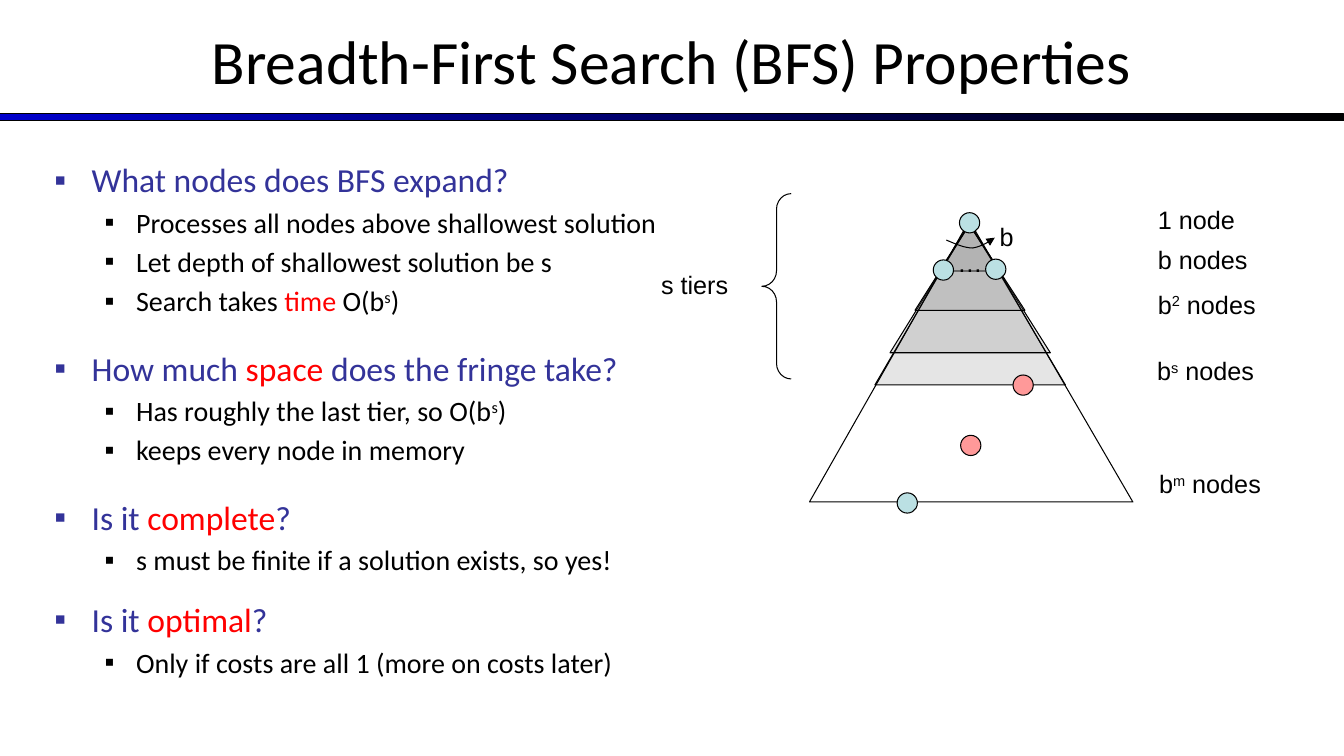
from dataclasses import dataclass

from lxml.etree import SubElement
from pptx import Presentation
from pptx.dml.color import RGBColor
from pptx.enum.shapes import MSO_SHAPE
from pptx.enum.text import MSO_ANCHOR, PP_ALIGN
from pptx.oxml.ns import qn
from pptx.shapes.autoshape import Shape
from pptx.slide import Slide
from pptx.text.text import TextFrame, _Paragraph
from pptx.util import Cm, Pt


@dataclass(frozen=True)
class Theme:
    body_font: str = "Calibri"
    label_font: str = "Arial"
    title_size: float = 44
    heading_size: float = 24
    point_size: float = 20
    label_size: float = 18
    line_width: float = 0.75
    black: str = "000000"
    bar_start: str = "0000CC"
    heading: str = "333399"
    accent: str = "FF0000"
    tier: str = "808080"
    node: str = "BBE0E3"
    solution: str = "FF9999"


@dataclass(frozen=True)
class Piece:
    text: str
    accent: bool = False
    raised: bool = False


@dataclass(frozen=True)
class Level:
    margin: float
    hanging: float
    size: float
    color: str


@dataclass(frozen=True)
class Bullet:
    level: Level
    pieces: list[Piece]
    space_before: float


@dataclass(frozen=True)
class Triangle:
    top: float
    bottom: float
    left: float
    right: float


@dataclass(frozen=True)
class Node:
    left: float
    top: float
    color: str


@dataclass(frozen=True)
class Label:
    left: float
    top: float
    width: float
    pieces: list[Piece]


Point = tuple[float, float]
THEME = Theme()
APEX_X = 24.43
NODE_SIZE = 0.51
LABEL_HEIGHT = 1.02
HEADING = Level(0.94, 0.94, THEME.heading_size, THEME.heading)
POINT = Level(2.06, 0.79, THEME.point_size, THEME.black)


def power(before: str, exponent: str, after: str) -> list[Piece]:
    return [Piece(before), Piece(exponent, raised=True), Piece(after)]


def question(before: str, key: str, after: str, space_before: float) -> Bullet:
    return Bullet(HEADING, [Piece(before), Piece(key, accent=True), Piece(after)], space_before)


def point(*pieces: Piece) -> Bullet:
    return Bullet(POINT, list(pieces), 4)


BULLETS = [
    Bullet(HEADING, [Piece("What nodes does BFS expand?")], 0),
    point(Piece("Processes all nodes above shallowest solution")),
    point(Piece("Let depth of shallowest solution be s")),
    point(Piece("Search takes "), Piece("time", accent=True), *power(" O(b", "s", ")")),
    question("How much ", "space", " does the fringe take?", 21.8),
    point(*power("Has roughly the last tier, so O(b", "s", ")")),
    point(Piece("keeps every node in memory")),
    question("Is it ", "complete", "?", 21.8),
    point(Piece("s must be finite if a solution exists, so yes!")),
    question("Is it ", "optimal", "?", 16.2),
    point(Piece("Only if costs are all 1 (more on costs later)")),
]
TIERS = [
    Triangle(5.66, 6.83, 23.67, 25.20),
    Triangle(5.61, 9.70, 22.05, 26.85),
    Triangle(5.66, 8.89, 22.43, 26.47),
    Triangle(5.66, 7.82, 23.06, 25.83),
]
WHOLE_TREE = Triangle(5.56, 12.65, 20.40, 28.55)
NODES = [
    Node(24.18, 5.36, THEME.node),
    Node(23.52, 6.55, THEME.node),
    Node(24.84, 6.53, THEME.node),
    Node(22.61, 12.42, THEME.node),
    Node(25.53, 9.45, THEME.solution),
    Node(24.21, 10.97, THEME.solution),
]
LABELS = [
    Label(23.88, 6.12, 0.76, [Piece("…")]),
    Label(24.94, 5.44, 0.84, [Piece("b")]),
    Label(28.93, 5.03, 3.10, [Piece("1 node")]),
    Label(28.93, 6.02, 3.10, [Piece("b nodes")]),
    Label(28.93, 7.16, 3.10, power("b", "2", " nodes")),
    Label(28.91, 8.84, 4.06, power("b", "s", " nodes")),
    Label(28.96, 11.68, 4.06, power("b", "m", " nodes")),
    Label(16.41, 6.65, 3.51, [Piece("s tiers")]),
]
BRANCH_CURVES = [
    [(23.85, 6.05), (24.08, 6.15), (24.31, 6.25), (24.51, 6.25)],
    [(24.51, 6.25), (24.71, 6.22), (24.89, 6.12), (25.07, 5.99)],
]


def style_shape(shape: Shape, fill: str | None = None) -> None:
    shape.shadow.inherit = False
    shape.line.color.rgb = RGBColor.from_string(THEME.black)
    shape.line.width = Pt(THEME.line_width)
    if fill is None:
        shape.fill.background()
    else:
        shape.fill.solid()
        shape.fill.fore_color.rgb = RGBColor.from_string(fill)


def write_pieces(paragraph: _Paragraph, pieces: list[Piece], font: str, size: float, color: str) -> None:
    for piece in pieces:
        run = paragraph.add_run()
        run.text = piece.text
        run.font.name = font
        run.font.size = Pt(size)
        run.font.color.rgb = RGBColor.from_string(THEME.accent if piece.accent else color)
        if piece.raised:
            run._r.get_or_add_rPr().set("baseline", "30000")


def add_text_frame(slide: Slide, left: float, top: float, width: float, height: float) -> TextFrame:
    text_frame = slide.shapes.add_textbox(Cm(left), Cm(top), Cm(width), Cm(height)).text_frame
    text_frame.word_wrap = True
    return text_frame


def add_bullet(paragraph: _Paragraph, bullet: Bullet) -> None:
    level = bullet.level
    properties = paragraph._p.get_or_add_pPr()
    properties.set("marL", str(Cm(level.margin)))
    properties.set("indent", str(-Cm(level.hanging)))
    bullet_color = SubElement(properties, qn("a:buClr"))
    SubElement(bullet_color, qn("a:srgbClr")).set("val", level.color)
    SubElement(properties, qn("a:buFont")).set("typeface", THEME.label_font)
    SubElement(properties, qn("a:buChar")).set("char", "▪")
    paragraph.space_before = Pt(bullet.space_before)
    write_pieces(paragraph, bullet.pieces, THEME.body_font, level.size, level.color)


def add_outline(slide: Slide, points: list[Point], close: bool) -> Shape:
    corners = [(Cm(x), Cm(y)) for x, y in points]
    builder = slide.shapes.build_freeform(*corners[0])
    builder.add_line_segments(corners[1:], close=close)
    return builder.convert_to_shape()


def add_triangle(slide: Slide, triangle: Triangle, fill: str | None = None) -> None:
    corners = [(APEX_X, triangle.top), (triangle.left, triangle.bottom), (triangle.right, triangle.bottom)]
    shape = add_outline(slide, corners, close=True)
    style_shape(shape, fill)
    if fill is not None:
        color = shape._element.spPr.find(qn("a:solidFill"))[0]
        SubElement(color, qn("a:alpha")).set("val", "20000")


def bezier(controls: list[Point], t: float) -> Point:
    weights = ((1 - t) ** 3, 3 * t * (1 - t) ** 2, 3 * t * t * (1 - t), t**3)
    x, y = (sum(w * c[axis] for w, c in zip(weights, controls)) for axis in (0, 1))
    return x, y


def add_branch_arrow(slide: Slide, steps: int = 8) -> None:
    points = BRANCH_CURVES[0][:1]
    points += [bezier(curve, step / steps) for curve in BRANCH_CURVES for step in range(1, steps + 1)]
    shape = add_outline(slide, points, close=False)
    style_shape(shape)
    SubElement(shape.line._get_or_add_ln(), qn("a:tailEnd")).set("type", "triangle")


def main() -> None:
    presentation = Presentation()
    presentation.slide_width, presentation.slide_height = Cm(33.87), Cm(19.05)
    slide = presentation.slides.add_slide(presentation.slide_layouts[6])

    # Title and gradient rule
    bar = slide.shapes.add_shape(MSO_SHAPE.RECTANGLE, Cm(0), Cm(2.87), Cm(33.87), Cm(0.18))
    style_shape(bar)
    bar.fill.gradient()
    bar.fill.gradient_angle = 0
    for stop, position, color in zip(bar.fill.gradient_stops, (0, 1), (THEME.bar_start, THEME.black)):
        stop.position = position
        stop.color.rgb = RGBColor.from_string(color)
    title = add_text_frame(slide, 0, 0, 33.87, 3.02)
    title.vertical_anchor = MSO_ANCHOR.MIDDLE
    title.paragraphs[0].alignment = PP_ALIGN.CENTER
    write_pieces(title.paragraphs[0], [Piece("Breadth-First Search (BFS) Properties")],
                 THEME.body_font, THEME.title_size, THEME.black)

    # Questions and answers
    body = add_text_frame(slide, 1.12, 3.89, 15.8, 14.12)
    for index, bullet in enumerate(BULLETS):
        add_bullet(body.add_paragraph() if index else body.paragraphs[0], bullet)

    # Search tree with its tiers
    for tier in TIERS:
        add_triangle(slide, tier, THEME.tier)
    add_triangle(slide, WHOLE_TREE)
    for node in NODES:
        circle = slide.shapes.add_shape(
            MSO_SHAPE.OVAL, Cm(node.left), Cm(node.top), Cm(NODE_SIZE), Cm(NODE_SIZE))
        style_shape(circle, node.color)
    add_branch_arrow(slide)

    # Brace and labels
    brace = slide.shapes.add_shape(MSO_SHAPE.LEFT_BRACE, Cm(19.2), Cm(4.88), Cm(0.74), Cm(4.67))
    brace.adjustments[0] = 0.53
    style_shape(brace)
    for label in LABELS:
        text_frame = add_text_frame(slide, label.left, label.top, label.width, LABEL_HEIGHT)
        write_pieces(text_frame.paragraphs[0], label.pieces, THEME.label_font, THEME.label_size, THEME.black)

    presentation.save("out.pptx")


if __name__ == "__main__":
    main()
